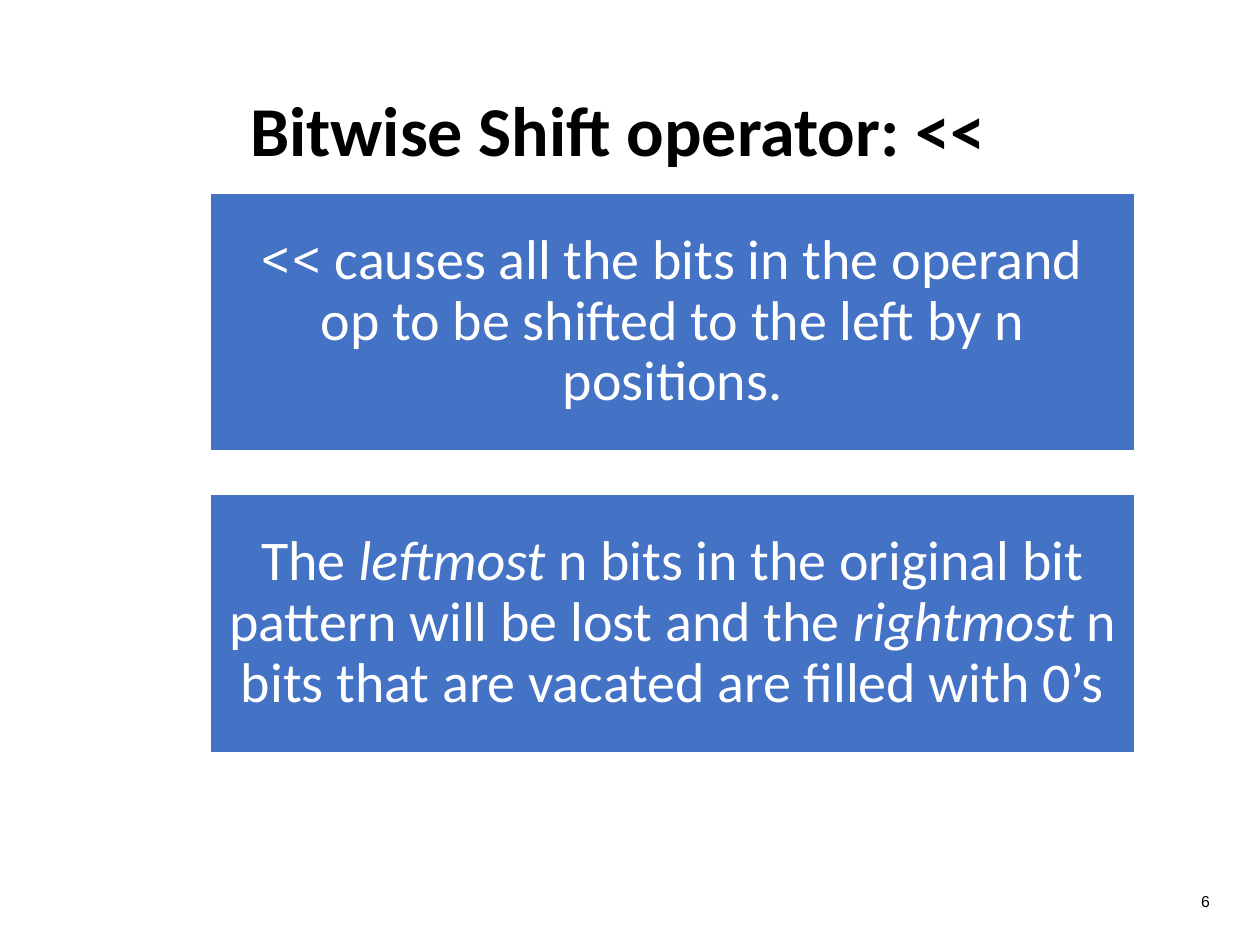
from dataclasses import dataclass

from pptx import Presentation
from pptx.dml.color import RGBColor
from pptx.enum import shapes, text
from pptx.util import Pt


@dataclass(frozen=True)
class Theme:
    ink: RGBColor = RGBColor(0, 0, 0)
    paper: RGBColor = RGBColor(255, 255, 255)
    panel: RGBColor = RGBColor(0x44, 0x72, 0xC4)
    body_font: str = "Calibri"
    symbol_font: str = "League Spartan"
    number_font: str = "Arial"
    title_size: int = 40
    body_size: int = 32
    number_size: int = 9


class SlideBuilder:
    def __init__(self, page, theme):
        self.page = page
        self.theme = theme

    def set_text(self, box, spans, size, color, align, spacing=1.0, inset=None):
        """Fill a box with one paragraph of (wording, font, bold, italic) spans."""
        frame = box.text_frame
        frame.word_wrap = True
        frame.vertical_anchor = text.MSO_ANCHOR.MIDDLE
        if inset is not None:
            frame.margin_left = frame.margin_right = Pt(inset)
            frame.margin_top = frame.margin_bottom = Pt(inset)
        para = frame.paragraphs[0]
        para.alignment = align
        para.line_spacing = spacing
        for wording, font, bold, italic in spans:
            span = para.add_run()
            span.text = wording
            span.font.name = font
            span.font.size = Pt(size)
            span.font.bold = bold
            span.font.italic = italic
            span.font.color.rgb = color

    def title(self, wording, left, top, width, height):
        box = self.page.shapes.add_textbox(Pt(left), Pt(top), Pt(width), Pt(height))
        self.set_text(box, [(wording, self.theme.body_font, True, False)],
                      self.theme.title_size, self.theme.ink, text.PP_ALIGN.CENTER, 0.9)

    def page_number(self, wording, left, top, width, height):
        box = self.page.shapes.add_textbox(Pt(left), Pt(top), Pt(width), Pt(height))
        self.set_text(box, [(wording, self.theme.number_font, False, False)],
                      self.theme.number_size, self.theme.ink, text.PP_ALIGN.RIGHT)

    def panel(self, spans, left, top, width, height):
        box = self.page.shapes.add_shape(
            shapes.MSO_SHAPE.RECTANGLE, Pt(left), Pt(top), Pt(width), Pt(height))
        box.shadow.inherit = False
        box.fill.solid()
        box.fill.fore_color.rgb = self.theme.panel
        box.line.color.rgb = self.theme.paper
        box.line.width = Pt(1)
        self.set_text(box, spans, self.theme.body_size, self.theme.paper,
                      text.PP_ALIGN.CENTER, 0.9, inset=9.6)


def main():
    deck = Presentation()
    deck.slide_width, deck.slide_height = Pt(720), Pt(540)
    page = deck.slides.add_slide(deck.slide_layouts[6])
    theme = Theme()
    builder = SlideBuilder(page, theme)

    # Heading and page number
    builder.title("Bitwise Shift operator: <<", 80.6, 56.2, 545, 40.3)
    builder.page_number("6", 670.3, 500.4, 28.1, 28.8)

    # Stacked explanation panels
    body = theme.body_font
    panels = [
        [("<<", theme.symbol_font, False, False),
         (" causes all the bits in the operand op to be shifted to the left"
          " by n positions.", body, False, False)],
        [("The ", body, False, False),
         ("leftmost", body, False, True),
         (" n bits in the original bit pattern will be lost and the ", body, False, False),
         ("rightmost ", body, False, True),
         ("n bits that are vacated are filled with 0’s", body, False, False)],
    ]
    height, gap = 147.6, 24.6
    for index, spans in enumerate(panels):
        builder.panel(spans, 120.2, 110.2 + index * (height + gap), 528.5, height)

    deck.save("out.pptx")


if __name__ == "__main__":
    main()
